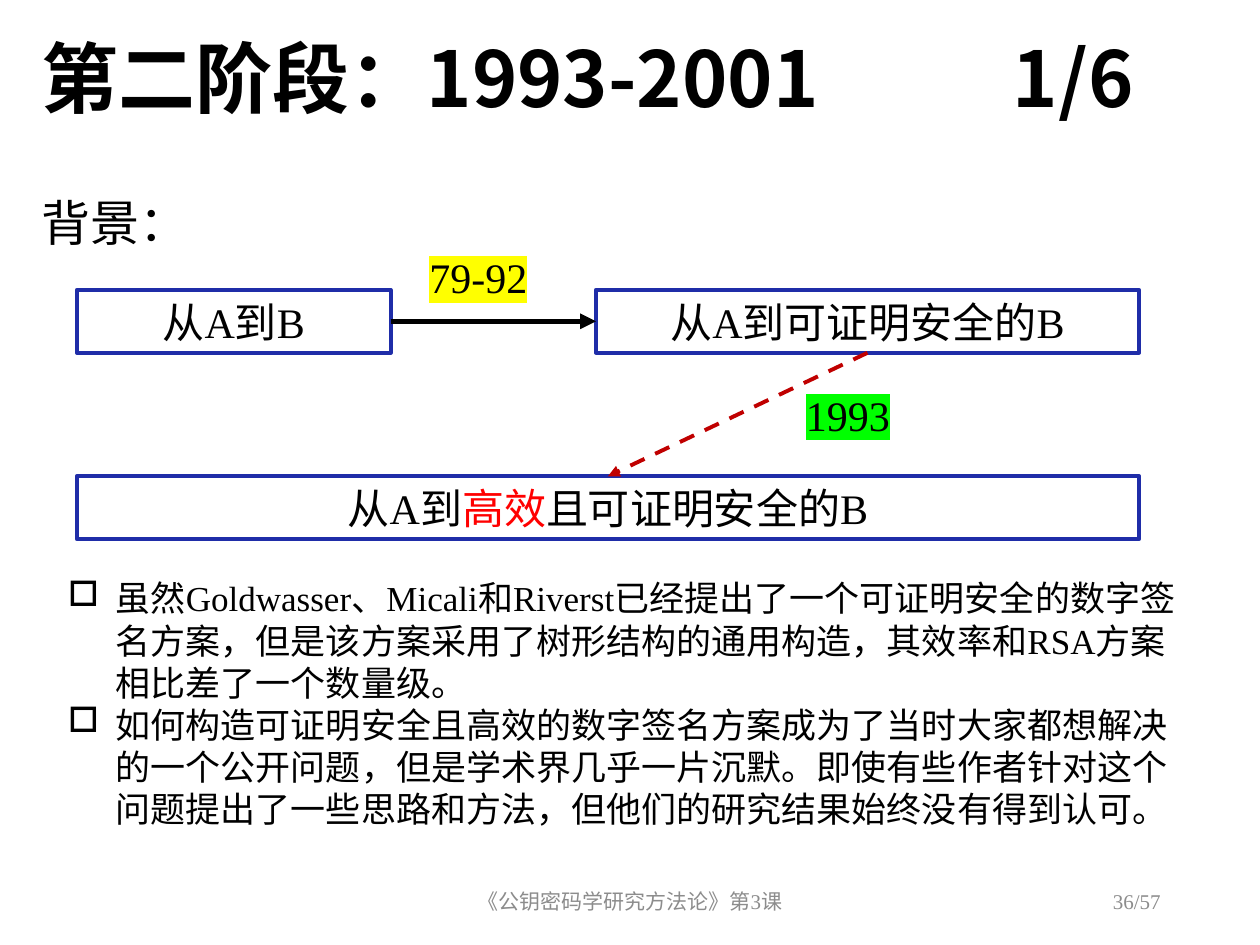
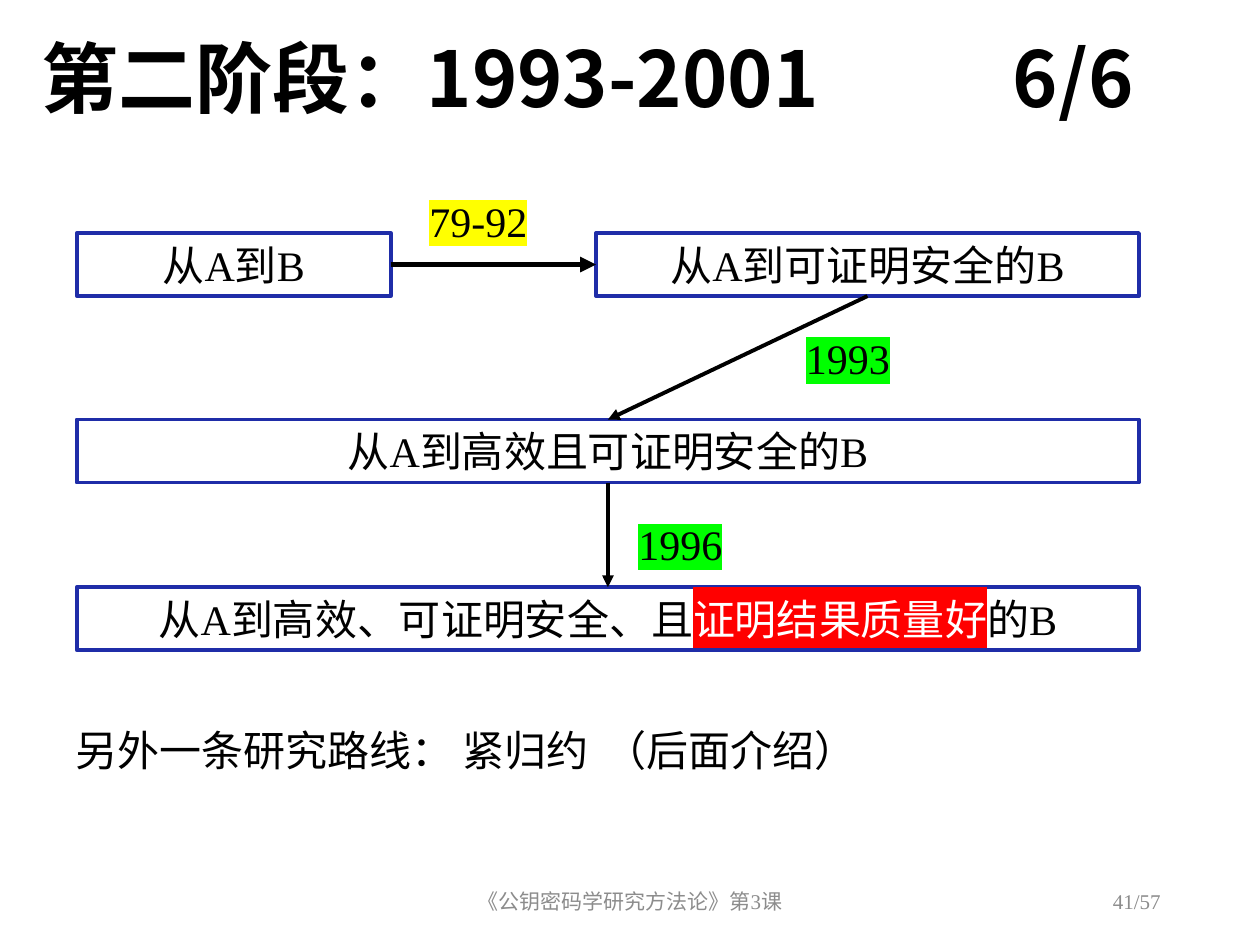
from lxml import etree
from pptx import Presentation
from pptx.dml.color import RGBColor
from pptx.enum.dml import MSO_LINE
from pptx.enum.shapes import MSO_CONNECTOR, MSO_SHAPE
from pptx.enum.text import MSO_ANCHOR, PP_ALIGN
from pptx.oxml.ns import qn
from pptx.util import Inches, Pt

LEFT, CENTER, RIGHT = PP_ALIGN.LEFT, PP_ALIGN.CENTER, PP_ALIGN.RIGHT
TOP, MIDDLE = MSO_ANCHOR.TOP, MSO_ANCHOR.MIDDLE
STRAIGHT, RECTANGLE, DASH = MSO_CONNECTOR.STRAIGHT, MSO_SHAPE.RECTANGLE, MSO_LINE.DASH
SIDE_TOP, SIDE_LEFT, SIDE_BOTTOM, SIDE_RIGHT = range(4)

SANS, SERIF = "Noto Sans CJK SC", "Times New Roman"
BLACK, WHITE, GRAY, BLUE = "000000", "FFFFFF", "8C8C8C", "1F2DA8"
RED, DARK_RED, YELLOW, GREEN = "FF0000", "C00000", "FFFF00", "00FF00"

STAGE_LEFT, STAGE_WIDTH, STAGE_HEIGHT = 0.61, 8.43, 0.5
LABEL_WIDTH = 1.16


def rgb(value):
    return RGBColor.from_string(value)


def add_xml(parent, tag, **attributes):
    return etree.SubElement(parent, qn(tag), attributes)


def write_paragraph(paragraph, pieces, size, face=SERIF, color=BLACK,
                    align=LEFT, bold=False):
    paragraph.alignment = align
    font = paragraph.font
    font.size, font.name, font.bold = Pt(size), face, bold
    font.color.rgb = rgb(color)
    defaults = paragraph._p.get_or_add_pPr().find(qn("a:defRPr"))
    add_xml(defaults, "a:ea", typeface=SANS)
    for text, piece_color, highlight in pieces:
        run = paragraph.add_run()
        run.text = text
        if piece_color:
            run.font.color.rgb = rgb(piece_color)
        if highlight:
            mark = add_xml(run._r.get_or_add_rPr(), "a:highlight")
            add_xml(mark, "a:srgbClr", val=highlight)


def plain(text):
    return [(text, None, None)]


def add_text(slide, box, pieces, size, anchor=TOP, tab=None, **style):
    frame = slide.shapes.add_textbox(*map(Inches, box)).text_frame
    frame.word_wrap = True
    frame.vertical_anchor = anchor
    paragraph = frame.paragraphs[0]
    if tab:
        position, side = tab
        stops = add_xml(paragraph._p.get_or_add_pPr(), "a:tabLst")
        add_xml(stops, "a:tab", pos=str(Inches(position)), algn=side)
    write_paragraph(paragraph, pieces, size, **style)


def add_frame(slide, part, page):
    add_text(slide, (0.23, 0.19, 9.57, 0.92), plain(f"第二阶段：1993-2001\t{part}/6"),
             44, tab=(8.67, "r"), face=SANS, bold=True)
    add_text(slide, (3.31, 6.95, 3.38, 0.4), plain("《公钥密码学研究方法论》第3课"),
             12, MIDDLE, color=GRAY, align=CENTER)
    add_text(slide, (7.06, 6.95, 2.25, 0.4), plain(f"{page}/57"),
             12, MIDDLE, color=GRAY, align=RIGHT)


def add_stage(slide, left, top, width, pieces):
    stage = slide.shapes.add_shape(
        RECTANGLE, *map(Inches, (left, top, width, STAGE_HEIGHT)))
    stage.shadow.inherit = False
    stage.fill.background()
    stage.line.color.rgb = rgb(BLUE)
    stage.line.width = Pt(2.25)
    frame = stage.text_frame
    frame.word_wrap = True
    frame.vertical_anchor = MIDDLE
    write_paragraph(frame.paragraphs[0], pieces, 24, align=CENTER)
    return stage


def add_step(slide, start, start_side, end, end_side, color=BLACK, width=2.25, dash=None):
    arrow = slide.shapes.add_connector(STRAIGHT, 0, 0, 0, 0)
    arrow.begin_connect(start, start_side)
    arrow.end_connect(end, end_side)
    arrow.line.color.rgb = rgb(color)
    arrow.line.width = Pt(width)
    if dash:
        arrow.line.dash_style = dash
    add_xml(arrow.line._get_or_add_ln(), "a:tailEnd", type="triangle")
    add_xml(arrow._element.spPr, "a:effectLst")


def add_years(slide, left, top, years, highlight, align=CENTER):
    add_text(slide, (left, top, LABEL_WIDTH, STAGE_HEIGHT), [(years, None, highlight)],
             24, align=align)


def add_roadmap(slide, top, efficient_pieces, color=BLACK, dash=None):
    basic = add_stage(slide, STAGE_LEFT, top, 2.49, plain("从A到B"))
    provable = add_stage(slide, 4.73, top, 4.31, plain("从A到可证明安全的B"))
    efficient = add_stage(slide, STAGE_LEFT, top + 1.48, STAGE_WIDTH, efficient_pieces)
    add_step(slide, basic, SIDE_RIGHT, provable, SIDE_LEFT, width=3)
    add_step(slide, provable, SIDE_BOTTOM, efficient, SIDE_TOP, color, dash=dash)
    add_years(slide, 3.31, top - 0.35, "79-92", YELLOW, LEFT)
    add_years(slide, 6.15, top + 0.74, "1993", GREEN)
    return efficient


def add_bullets(slide, box, items):
    frame = slide.shapes.add_textbox(*map(Inches, box)).text_frame
    frame.word_wrap = True
    for index, item in enumerate(items):
        paragraph = frame.add_paragraph() if index else frame.paragraphs[0]
        properties = paragraph._p.get_or_add_pPr()
        properties.set("marL", str(Inches(0.38)))
        properties.set("indent", str(-Inches(0.38)))
        add_xml(properties, "a:buChar", char="□")
        paragraph.line_spacing = Pt(24)
        write_paragraph(paragraph, plain(item), 20)


def build_background(slide):
    add_frame(slide, 1, 36)
    add_text(slide, (0.23, 1.48, 9.57, 0.61), plain("背景："), 28)
    add_roadmap(slide, 2.3, [("从A到", None, None), ("高效", RED, None),
                             ("且可证明安全的B", None, None)], DARK_RED, DASH)
    add_bullets(slide, (0.44, 4.53, 9.1, 2.02), [
        "虽然Goldwasser、Micali和Riverst已经提出了一个可证明安全的数字签名方案，"
        "但是该方案采用了树形结构的通用构造，其效率和RSA方案相比差了一个数量级。",
        "如何构造可证明安全且高效的数字签名方案成为了当时大家都想解决的一个公开问题，"
        "但是学术界几乎一片沉默。即使有些作者针对这个问题提出了一些思路和方法，"
        "但他们的研究结果始终没有得到认可。",
    ])


def build_summary(slide):
    add_frame(slide, 6, 41)
    efficient = add_roadmap(slide, 1.85, plain("从A到高效且可证明安全的B"))
    tight = add_stage(slide, STAGE_LEFT, 4.66, STAGE_WIDTH, [
        ("从A到高效、可证明安全、且", None, None),
        ("证明结果质量好", WHITE, RED), ("的B", None, None)])
    add_step(slide, efficient, SIDE_BOTTOM, tight, SIDE_TOP)
    add_years(slide, 4.82, 4.07, "1996", GREEN)
    add_text(slide, (0.5, 5.7, 8.81, 0.5), plain("另外一条研究路线： 紧归约\t（后面介绍）"),
             24, tab=(4.2, "l"), face=SANS)


def main():
    deck = Presentation()
    deck.slide_width, deck.slide_height = Inches(10), Inches(7.5)
    for build in (build_background, build_summary):
        build(deck.slides.add_slide(deck.slide_layouts[6]))
    deck.save("out.pptx")


if __name__ == "__main__":
    main()
